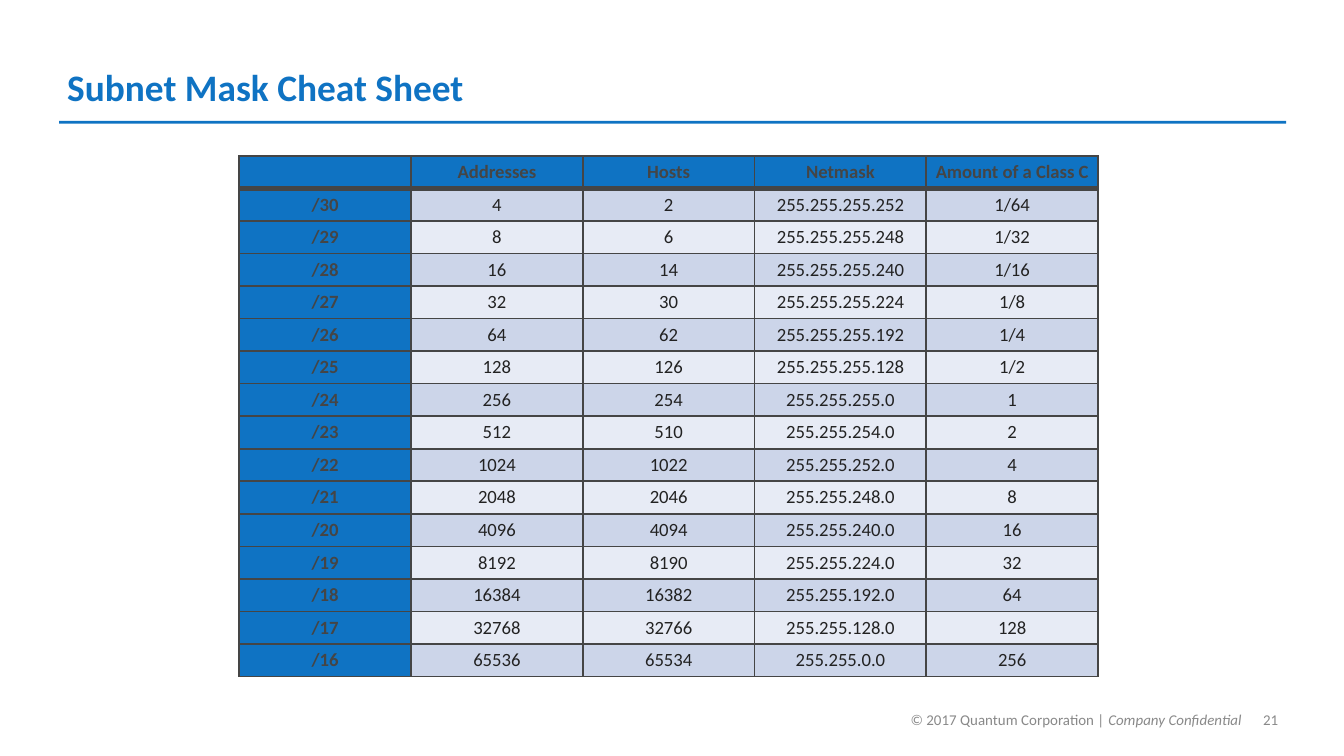
from pptx import Presentation
from pptx.dml.color import RGBColor
from pptx.enum.shapes import MSO_SHAPE
from pptx.enum.text import MSO_ANCHOR, MSO_AUTO_SIZE, PP_ALIGN
from pptx.oxml import parse_xml
from pptx.oxml.ns import nsdecls
from pptx.util import Inches, Pt

# Content
TITLE = "Subnet Mask Cheat Sheet"
COPYRIGHT = [("© 2017 Quantum Corporation | ", False), ("Company Confidential", True)]
PAGE_NUMBER = [("21", False)]
SUBNETS = [
    ("", "Addresses", "Hosts", "Netmask", "Amount of a Class C"),
    ("/30", "4", "2", "255.255.255.252", "1/64"),
    ("/29", "8", "6", "255.255.255.248", "1/32"),
    ("/28", "16", "14", "255.255.255.240", "1/16"),
    ("/27", "32", "30", "255.255.255.224", "1/8"),
    ("/26", "64", "62", "255.255.255.192", "1/4"),
    ("/25", "128", "126", "255.255.255.128", "1/2"),
    ("/24", "256", "254", "255.255.255.0", "1"),
    ("/23", "512", "510", "255.255.254.0", "2"),
    ("/22", "1024", "1022", "255.255.252.0", "4"),
    ("/21", "2048", "2046", "255.255.248.0", "8"),
    ("/20", "4096", "4094", "255.255.240.0", "16"),
    ("/19", "8192", "8190", "255.255.224.0", "32"),
    ("/18", "16384", "16382", "255.255.192.0", "64"),
    ("/17", "32768", "32766", "255.255.128.0", "128"),
    ("/16", "65536", "65534", "255.255.0.0", "256"),
]

THEME = {
    "font": "Calibri",
    "blue": "0F73C3", "gray": "898989", "dark": "454545", "text": "222222",
    "bands": ("CCD5E9", "E7EBF5"),
    "title_size": 20, "table_size": 10, "footer_size": 8,
    "border": 1, "header_border": 3,
}


def color(value):
    return RGBColor.from_string(value)


def style_font(font, size, value, bold=False):
    font.name, font.size, font.bold = THEME["font"], Pt(size), bold
    font.color.rgb = color(value)


def place(shape, *box):
    shape.left, shape.top, shape.width, shape.height = map(Inches, box)


def set_margins(frame, left, top, right, bottom):
    frame.margin_left, frame.margin_top = Inches(left), Inches(top)
    frame.margin_right, frame.margin_bottom = Inches(right), Inches(bottom)


def add_footer(slide, box, runs, align):
    frame = slide.shapes.add_textbox(*map(Inches, box)).text_frame
    frame.word_wrap = True
    frame.vertical_anchor = MSO_ANCHOR.MIDDLE
    set_margins(frame, 0, 0, 0, 0)
    paragraph = frame.paragraphs[0]
    paragraph.alignment = align
    style_font(paragraph.font, THEME["footer_size"], THEME["gray"])
    for text, italic in runs:
        run = paragraph.add_run()
        run.text = text
        run.font.italic = italic


def set_borders(cell, row):
    header, thin = THEME["header_border"], THEME["border"]
    widths = {"lnL": thin, "lnR": thin,
              "lnT": header if row == 1 else thin,
              "lnB": header if row == 0 else thin}
    properties = cell._tc.get_or_add_tcPr()
    for position, (tag, width) in enumerate(widths.items()):
        properties.insert(position, parse_xml(
            f'<a:{tag} {nsdecls("a")} w="{Pt(width)}"><a:solidFill>'
            f'<a:srgbClr val="{THEME["dark"]}"/></a:solidFill></a:{tag}>'))


def fill_cell(cell, text, row, column):
    is_header = row == 0 or column == 0
    cell.fill.solid()
    cell.fill.fore_color.rgb = color(
        THEME["blue"] if is_header else THEME["bands"][(row - 1) % 2])
    set_borders(cell, row)
    set_margins(cell, 0.04, 0.03, 0.04, 0.03)
    cell.vertical_anchor = MSO_ANCHOR.MIDDLE
    paragraph = cell.text_frame.paragraphs[0]
    paragraph.alignment = PP_ALIGN.CENTER
    size = THEME["table_size"]
    style_font(paragraph.font, size, THEME["dark" if is_header else "text"], is_header)
    if text:
        paragraph.add_run().text = text
    else:  # keeps the empty cell from stretching its row
        paragraph._p.get_or_add_endParaRPr().set("sz", str(size * 100))


def add_subnet_table(slide, left, top, width, height):
    rows, columns = len(SUBNETS), len(SUBNETS[0])
    table = slide.shapes.add_table(
        rows, columns, *map(Inches, (left, top, width, height))).table
    for column in table.columns:
        column.width = Inches(width / columns)
    for row in table.rows:
        row.height = Inches(height / rows)
    for r, values in enumerate(SUBNETS):
        for c, text in enumerate(values):
            fill_cell(table.cell(r, c), text, r, c)


def main():
    presentation = Presentation()
    presentation.slide_width = Inches(10)
    presentation.slide_height = Inches(10 * 9 / 16)
    slide = presentation.slides.add_slide(presentation.slide_layouts[5])

    # Rule under the title
    rule = slide.shapes.add_shape(
        MSO_SHAPE.RECTANGLE, *map(Inches, (0.44, 0.9, 9.13, 0.02)))
    rule.shadow.inherit = False
    rule.fill.solid()
    rule.fill.fore_color.rgb = color(THEME["blue"])
    rule.line.fill.background()

    # Title
    title = slide.shapes.title
    place(title, 0.4, 0.06, 8.6, 0.75)
    frame = title.text_frame
    frame.text = TITLE
    frame.auto_size = MSO_AUTO_SIZE.NONE
    frame.vertical_anchor = MSO_ANCHOR.BOTTOM
    set_margins(frame, 0.1, 0, 0, 0)
    paragraph = frame.paragraphs[0]
    paragraph.alignment = PP_ALIGN.LEFT
    paragraph.line_spacing = Pt(24)
    style_font(paragraph.font, THEME["title_size"], THEME["blue"], True)

    # Table and footer
    add_subnet_table(slide, 1.78, 1.16, 6.39, 3.88)
    add_footer(slide, (6.08, 5.22, 3.16, 0.27), COPYRIGHT, PP_ALIGN.RIGHT)
    add_footer(slide, (9.24, 5.22, 0.43, 0.27), PAGE_NUMBER, PP_ALIGN.CENTER)

    presentation.save("out.pptx")


if __name__ == "__main__":
    main()
